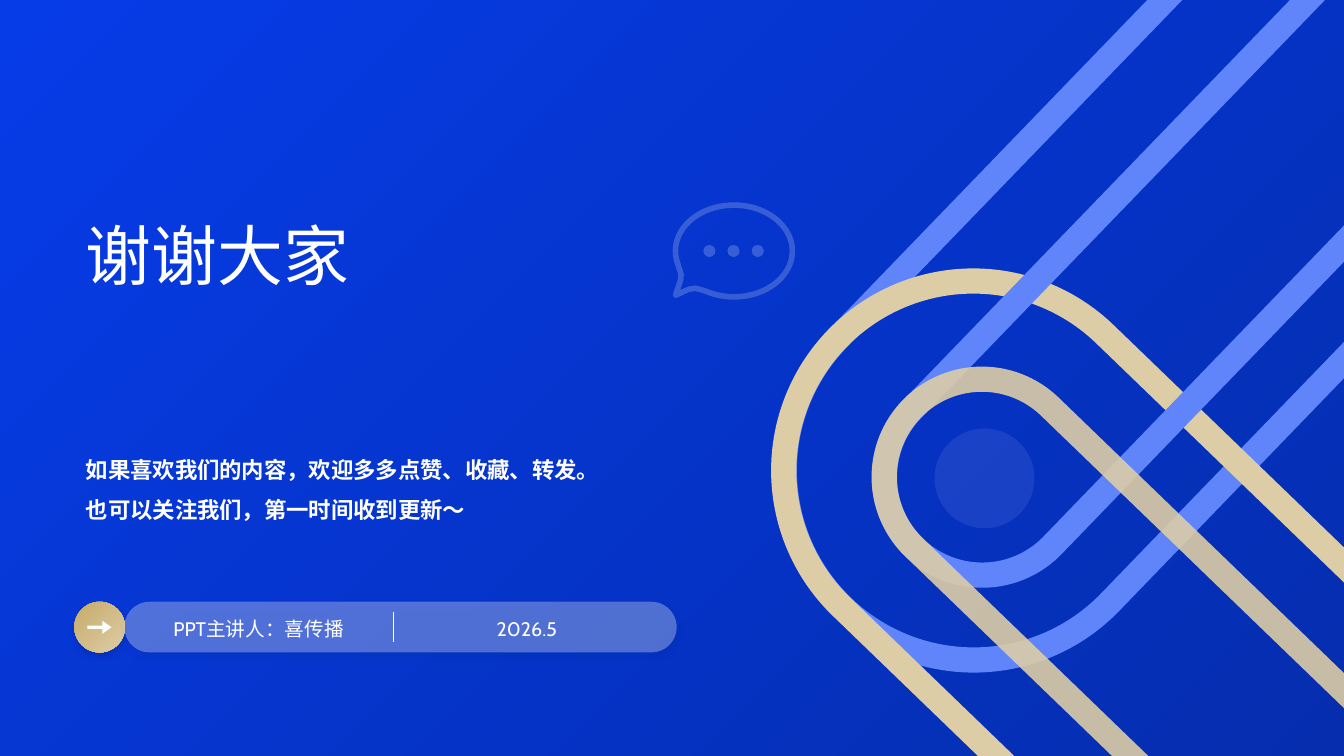
import math

import lxml.etree
import pptx
import pptx.dml.color
import pptx.enum.shapes
import pptx.enum.text
import pptx.oxml.ns
import pptx.util

HUES = {
    "white": "FFFFFF", "sky": "6085FB", "sand": "DDCDA6", "gold": "C6AB6A",
    "blue": "063CE8", "navy": "052DAE", "mist": "CAD6FE", "shade": "031E74",
}
KIND = pptx.enum.shapes.MSO_SHAPE
ALIGN = pptx.enum.text.PP_ALIGN
ANCHOR = pptx.enum.text.MSO_ANCHOR
Pt = pptx.util.Pt


def hue(name):
    return pptx.dml.color.RGBColor.from_string(HUES[name])


def node(parent, tag, **values):
    """Add a drawing element with the given attributes."""
    item = lxml.etree.SubElement(parent, pptx.oxml.ns.qn("a:" + tag))
    for key, value in values.items():
        item.set(key, str(value))
    return item


def fade(parent, share):
    for tint in parent.iter(pptx.oxml.ns.qn("a:srgbClr")):
        node(tint, "alpha", val=share * 1000)


class Deck:
    """Places elements by percent of the slide's width and height."""

    def __init__(self):
        self.show = pptx.Presentation()
        self.show.slide_width = pptx.util.Inches(13.33)
        self.show.slide_height = pptx.util.Inches(7.5)
        self.slide = self.show.slides.add_slide(self.show.slide_layouts[1])
        self.shapes = self.slide.shapes

    def across(self, share):
        return round(self.show.slide_width * share / 100)

    def down(self, share):
        return round(self.show.slide_height * share / 100)

    def box(self, x, y, w, h):
        return self.across(x), self.down(y), self.across(w), self.down(h)

    def paint(self, shape, fill=None, line=None, width=0, alpha=100):
        shape.shadow.inherit = False
        if fill is None:
            shape.fill.background()
        elif isinstance(fill, tuple):
            shape.fill.gradient()
            shape.fill.gradient_angle = 315
            for stop, name in zip(shape.fill.gradient_stops, fill):
                stop.color.rgb = hue(name)
        else:
            shape.fill.solid()
            shape.fill.fore_color.rgb = hue(fill)
        if line:
            shape.line.color.rgb = hue(line)
            shape.line.width = Pt(width)
        else:
            shape.line.fill.background()
        if alpha < 100:
            fade(shape.element.spPr, alpha)

    def shape(self, kind, place, adjust=(), turn=0, **style):
        shape = self.shapes.add_shape(kind, *self.box(*place))
        for at, value in enumerate(adjust):
            shape.adjustments[at] = value
        shape.rotation = turn
        self.paint(shape, **style)
        return shape

    def shadow(self, shape):
        effects = shape.element.spPr.find(pptx.oxml.ns.qn("a:effectLst"))
        cast = node(effects, "outerShdw", blurRad=Pt(4), dist=Pt(3),
                    dir=90 * 60000, algn="t", rotWithShape=0)
        node(cast, "srgbClr", val=HUES["shade"])
        fade(cast, 25)

    def rule(self, x, top, end):
        line = self.shapes.add_connector(
            pptx.enum.shapes.MSO_CONNECTOR.STRAIGHT,
            self.across(x), self.down(top), self.across(x), self.down(end))
        line.line.color.rgb = hue("white")
        line.line.width = Pt(1)
        node(line.element.spPr, "effectLst")

    def outline(self, points, **style):
        spots = [(self.across(x), self.down(y)) for x, y in points]
        pen = self.shapes.build_freeform(*spots[0])
        pen.add_line_segments(spots[1:], close=True)
        self.paint(pen.convert_to_shape(), **style)

    def words(self, shape, text, face, size, anchor, align, space, bold=False):
        frame = shape.text_frame
        layout = {"word_wrap": True, "vertical_anchor": anchor,
                  "auto_size": pptx.enum.text.MSO_AUTO_SIZE.NONE,
                  "margin_left": 0, "margin_right": 0,
                  "margin_top": 0, "margin_bottom": 0}
        for key, value in layout.items():
            setattr(frame, key, value)
        para = frame.paragraphs[0]
        flow = {"alignment": align, "line_spacing": space, "space_before": Pt(0)}
        for key, value in flow.items():
            setattr(para, key, value)
        run = para.add_run()
        run.text = text
        for key, value in {"name": face, "size": Pt(size), "bold": bold}.items():
            setattr(run.font, key, value)
        run.font.color.rgb = hue("white")
        node(run._r.get_or_add_rPr(), "ea", typeface=face)
        return para

    def holder(self, index, place, *parts, **style):
        shape = self.slide.placeholders[index]
        shape.left, shape.top, shape.width, shape.height = self.box(*place)
        self.shapes.element.append(shape.element)  # bring to the front
        para = self.words(shape, *parts, **style)
        if index:
            props = para._p.get_or_add_pPr()
            props.set("marL", "0")
            props.set("indent", "0")
            node(props, "buNone")

    def label(self, place, *parts, **style):
        self.words(self.shapes.add_textbox(*self.box(*place)), *parts, **style)


def main():
    deck = Deck()

    # Backdrop and crossing loops
    deck.shape(KIND.RECTANGLE, (0, 0, 100, 100), fill=("blue", "navy"))
    loops = [
        ((73.44, -29.2, 28.21, 127.33), 224, "sky", 100),
        ((69.24, 28.93, 28.21, 104.13), 314, "sand", 100),
        ((79.07, -8.13, 14.55, 93.73), 224, "sky", 100),
        ((76.07, 42.4, 14.55, 76.67), 314, "sand", 90),
    ]
    for place, turn, tint, alpha in loops:
        deck.shape(KIND.ROUND_2_SAME_RECTANGLE, place, (0.5, 0), turn,
                   line=tint, width=18, alpha=alpha)
    deck.shape(KIND.OVAL, (69.54, 56.67, 7.43, 13.2), fill="mist", alpha=10)

    # Speaker bar
    disc = deck.shape(KIND.OVAL, (5.53, 79.6, 3.77, 6.7), fill=("gold", "sand"))
    deck.shadow(disc)
    deck.shape(KIND.RIGHT_ARROW, (6.5, 82.1, 1.8, 1.75), (0.24, 0.7),
               fill="white")
    pill = deck.shape(KIND.ROUNDED_RECTANGLE, (9.25, 79.6, 41.1, 6.7), (0.5,),
                      fill="white", alpha=30)
    deck.shadow(pill)
    for left, text in ((11.48, "PPT主讲人：喜传播"), (31.43, "2026.5")):
        deck.label((left, 80.67, 15.53, 4.53), text, "Cabin", 14,
                   anchor=ANCHOR.MIDDLE, align=ALIGN.CENTER, space=1.1)
    deck.rule(29.26, 80.93, 84.93)

    # Speech bubble: an oval arc closed by a tail, with three dots
    arc = [(54.61 + 4.35 * math.cos(math.radians(turn)),
            33.2 + 6.07 * math.sin(math.radians(turn)))
           for turn in range(165, 481, 5)]
    tail = [(51.76, 38.13), (51.24, 38.27), (50.26, 39.07),
            (50.64, 37.07), (50.68, 36.27), (50.56, 35.6)]
    deck.outline(arc + tail, line="white", width=4, alpha=20)
    for step in range(3):
        deck.shape(KIND.OVAL, (52.33 + 1.8 * step, 32.4, 0.9, 1.6),
                   fill="white", alpha=20)

    # Title and closing words
    deck.holder(0, (6.38, 13.47, 48.31, 39.2), "谢谢大家", "Cabin", 47,
                anchor=ANCHOR.MIDDLE, align=ALIGN.LEFT, space=1.1)
    deck.holder(1, (6.38, 58.53, 39.08, 12.4),
                "如果喜欢我们的内容，欢迎多多点赞、收藏、转发。也可以关注我们，第一时间收到更新～",
                "Noto Sans CJK SC", 16, anchor=ANCHOR.TOP, align=ALIGN.LEFT,
                space=1.5, bold=True)

    deck.show.save("out.pptx")


if __name__ == "__main__":
    main()
